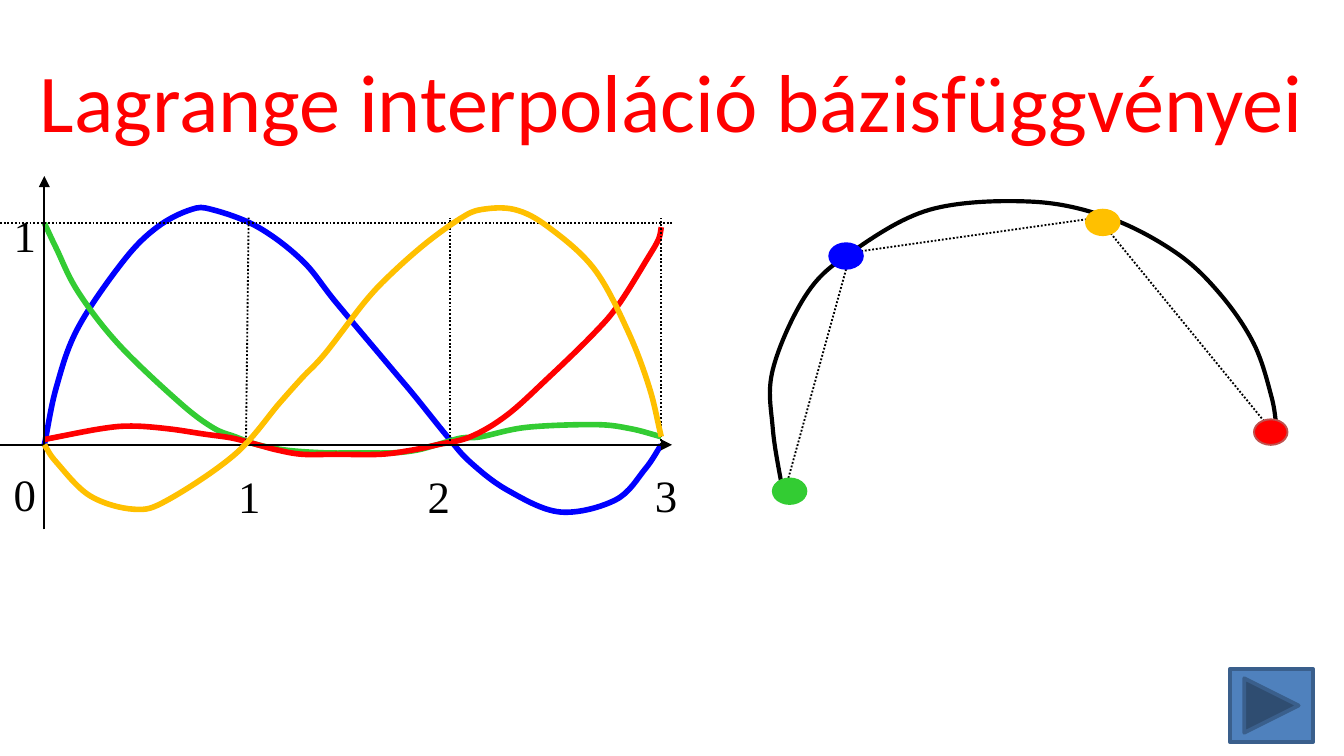
from collections import namedtuple

from lxml.etree import SubElement
from pptx import Presentation
from pptx.dml.color import RGBColor
from pptx.enum.dml import MSO_LINE
from pptx.enum.shapes import MSO_CONNECTOR, MSO_SHAPE
from pptx.enum.text import MSO_ANCHOR, MSO_AUTO_SIZE, PP_ALIGN
from pptx.oxml.ns import qn
from pptx.util import Pt

PX = 9144
Box = namedtuple("Box", "left top width height")

BLACK = RGBColor(0x00, 0x00, 0x00)
RED = RGBColor(0xFF, 0x00, 0x00)
BLUE = RGBColor(0x00, 0x00, 0xFF)
GREEN = RGBColor(0x33, 0xCC, 0x33)
YELLOW = RGBColor(0xFF, 0xC0, 0x00)
BRICK = RGBColor(0xC0, 0x50, 0x4D)
STEEL = RGBColor(0x4F, 0x81, 0xBD)
STEEL_DARK = RGBColor(0x3A, 0x5F, 0x8C)

BLUE_BASIS = [
    (33, 200), (42, 157), (58, 113), (92, 63), (117, 38), (142, 25), (158, 25),
    (192, 38), (225, 63), (250, 94), (292, 144), (308, 163), (333, 194), (350, 213),
    (378, 234), (417, 250), (458, 241), (480, 218), (492, 200),
]
GREEN_BASIS = [
    (33, 35), (42, 54), (58, 86), (88, 125), (133, 168), (158, 187), (175, 194),
    (192, 200), (213, 204), (242, 206), (267, 206), (292, 206), (310, 204), (325, 200),
    (343, 195), (358, 194), (392, 187), (443, 185), (469, 188), (492, 194),
]
RED_BASIS = [
    (33, 196), (75, 188), (98, 186), (125, 188), (152, 192), (173, 195), (192, 200),
    (207, 204), (225, 207), (250, 207), (283, 207), (306, 204), (325, 200), (350, 194),
    (377, 178), (407, 151), (441, 118), (460, 96), (482, 61), (490, 47), (492, 38),
]
YELLOW_BASIS = [
    (33, 200), (42, 213), (67, 238), (100, 248), (125, 241), (175, 207), (208, 169),
    (225, 150), (242, 132), (272, 93), (292, 72), (317, 50), (342, 32), (358, 25),
    (383, 25), (408, 38), (442, 69), (467, 115), (483, 157), (492, 194),
]
ARC = [
    (12, 220), (4, 170), (4, 126), (29, 70), (62, 39), (121, 7), (196, 1),
    (254, 13), (304, 39), (337, 70), (362, 107), (375, 146), (379, 170),
]
CONTROL_POLYGON = [(12, 220), (62, 39), (246, 13), (379, 176)]


def style_line(line, color, weight, dotted=False):
    line.color.rgb = color
    line.width = Pt(weight)
    if dotted:
        line.dash_style = MSO_LINE.ROUND_DOT


def to_page(box, point):
    return (box.left + point[0]) * PX, (box.top + point[1]) * PX


def add_polyline(page, box, points, color, weight, dotted=False):
    corners = [to_page(box, point) for point in points]
    builder = page.shapes.build_freeform(*corners[0], scale=1.0)
    builder.add_line_segments(corners[1:], close=False)
    shape = builder.convert_to_shape()
    shape.shadow.inherit = False
    shape.fill.background()
    style_line(shape.line, color, weight, dotted)
    return shape


def add_curve(page, box, knots, color, weight):
    shape = add_polyline(page, box, knots, color, weight)
    first, second = knots[:2]
    before_last, last = knots[-2:]
    lead = (2 * first[0] - second[0], 2 * first[1] - second[1])
    trail = (2 * last[0] - before_last[0], 2 * last[1] - before_last[1])
    chain = [to_page(box, knot) for knot in [lead, *knots, trail]]
    origin = (shape.left, shape.top)
    for index, segment in enumerate(list(shape.element.iter(qn("a:lnTo")))):
        previous, start, end, following = chain[index:index + 4]
        leave = [b + (c - a) / 6 for a, b, c in zip(previous, start, end)]
        arrive = [b - (c - a) / 6 for a, b, c in zip(start, end, following)]
        segment.tag = qn("a:cubicBezTo")
        segment.remove(segment[0])
        for point in (leave, arrive, end):
            x, y = (round(value - base) for value, base in zip(point, origin))
            SubElement(segment, qn("a:pt"), x=str(x), y=str(y))


def add_line(page, box, start, end, dotted=False, arrow=False):
    line = page.shapes.add_connector(
        MSO_CONNECTOR.STRAIGHT, *to_page(box, start), *to_page(box, end))
    style_line(line.line, BLACK, 1, dotted)
    properties = line.element.spPr
    if arrow:
        SubElement(properties.find(qn("a:ln")), qn("a:tailEnd"), type="triangle")
    SubElement(properties, qn("a:effectLst"))


def add_figure(page, kind, box, fill, outline, weight):
    shape = page.shapes.add_shape(kind, *(value * PX for value in box))
    shape.shadow.inherit = False
    shape.fill.solid()
    shape.fill.fore_color.rgb = fill
    style_line(shape.line, outline, weight)


def add_span(para, text, font, size, color):
    para.alignment = PP_ALIGN.CENTER
    span = para.add_run()
    span.text = text
    span.font.name = font
    span.font.size = Pt(size)
    span.font.color.rgb = color


def add_label(page, box, at, text):
    label = page.shapes.add_textbox(*to_page(box, at), 37 * PX, 50 * PX)
    frame = label.text_frame
    frame.word_wrap = False
    frame.auto_size = MSO_AUTO_SIZE.SHAPE_TO_FIT_TEXT
    add_span(frame.paragraphs[0], text, "Times New Roman", 24, BLACK)


def place_title(page, box):
    title = page.shapes.title
    title.left, title.top, title.width, title.height = (value * PX for value in box)
    frame = title.text_frame
    frame.auto_size = MSO_AUTO_SIZE.NONE
    frame.vertical_anchor = MSO_ANCHOR.MIDDLE
    add_span(frame.paragraphs[0], "Lagrange interpoláció bázisfüggvényei", "Calibri", 44, RED)


def draw_basis_plot(page, box):
    for knots, color in ((BLUE_BASIS, BLUE), (GREEN_BASIS, GREEN), (RED_BASIS, RED)):
        add_curve(page, box, knots, color, 3)
    add_line(page, box, (33, box.height), (33, 0), arrow=True)
    add_line(page, box, (0, 200), (box.width, 200), arrow=True)
    add_line(page, box, (0, 35), (box.width, 35), dotted=True)
    for bottom, top in (((183, 200), (185, 31)), ((335, 197), (335, 31)), ((492, 200), (492, 31))):
        add_line(page, box, bottom, top, dotted=True)
    labels = (("0", 0, 211), ("1", 0, 19), ("1", 167, 213), ("2", 308, 213), ("3", 477, 212))
    for text, left, top in labels:
        add_label(page, box, (left, top), text)
    add_curve(page, box, YELLOW_BASIS, YELLOW, 3)


def draw_interpolated_arc(page, box):
    add_curve(page, box, ARC, BLACK, 2.25)
    add_polyline(page, box, CONTROL_POLYGON, BLACK, 1, dotted=True)
    dots = ((46, 32, BLUE, BLUE), (237, 7, YELLOW, YELLOW),
            (362, 163, RED, BRICK), (4, 207, GREEN, GREEN))
    for left, top, fill, outline in dots:
        dot = Box(box.left + left, box.top + top, 25, 19)
        add_figure(page, MSO_SHAPE.OVAL, dot, fill, outline, 1)


def draw_next_button(page, box):
    add_figure(page, MSO_SHAPE.ACTION_BUTTON_FORWARD_OR_NEXT, box, STEEL, STEEL_DARK, 2)


def main():
    deck = Presentation()
    deck.slide_width = 1000 * PX
    deck.slide_height = deck.slide_width * 9 // 16
    page = deck.slides.add_slide(deck.slide_layouts[5])
    place_title(page, Box(0, 27, 1000, 94))
    draw_basis_plot(page, Box(0, 131, 500, 263))
    draw_interpolated_arc(page, Box(571, 149, 379, 220))
    draw_next_button(page, Box(915, 498, 62, 54))
    deck.save("out.pptx")


if __name__ == "__main__":
    main()
